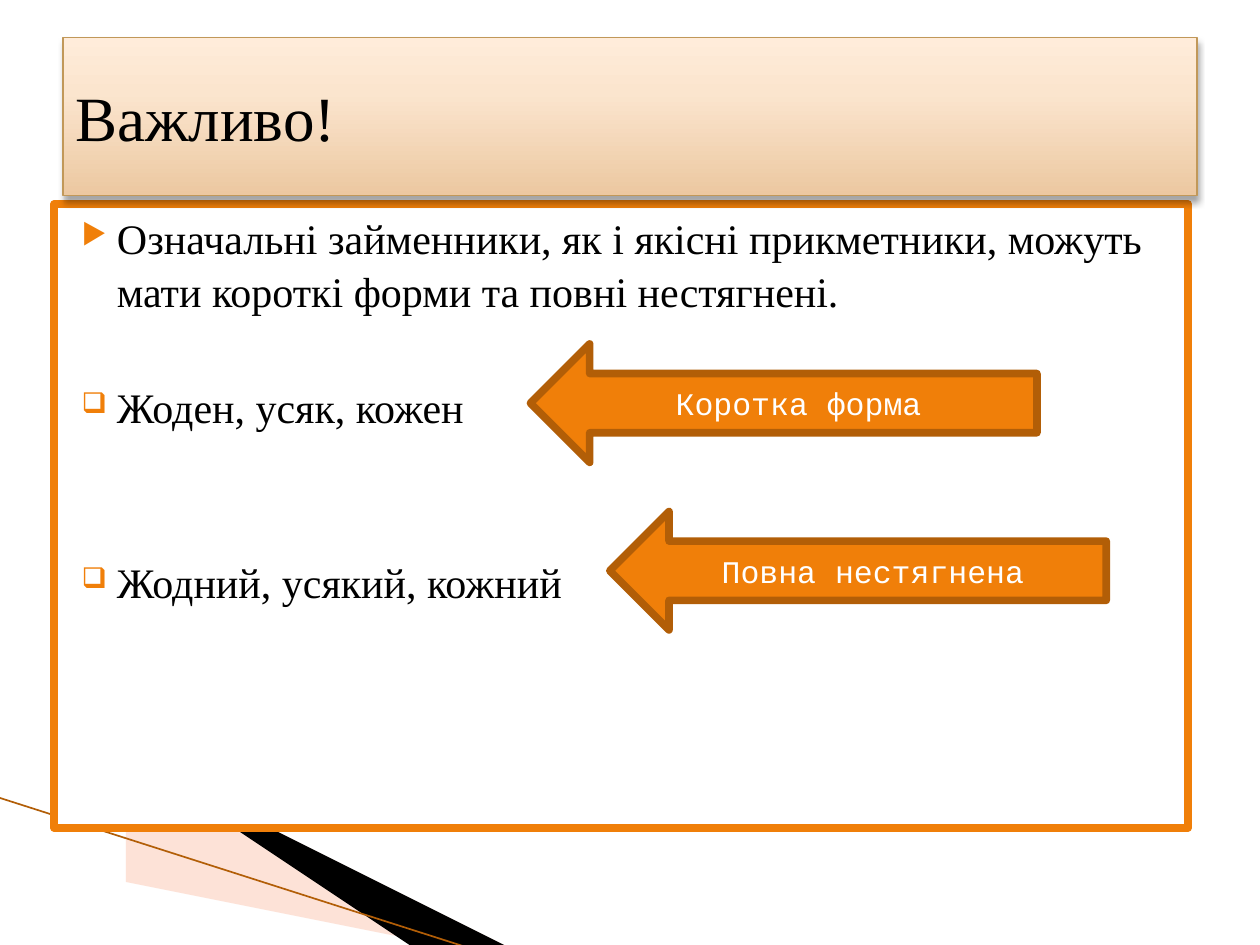
"""Builds a slide on the short and full forms of Ukrainian attributive pronouns."""
from copy import deepcopy

from pptx import Presentation
from pptx.dml.color import RGBColor
from pptx.enum.shapes import MSO_CONNECTOR, MSO_SHAPE
from pptx.enum.text import MSO_ANCHOR, PP_ALIGN
from pptx.oxml import parse_xml
from pptx.oxml.ns import nsdecls, qn
from pptx.util import Inches, Pt

RECTANGLE, LEFT_ARROW = MSO_SHAPE.RECTANGLE, MSO_SHAPE.LEFT_ARROW
STRAIGHT = MSO_CONNECTOR.STRAIGHT
TOP, MIDDLE = MSO_ANCHOR.TOP, MSO_ANCHOR.MIDDLE
LEFT, CENTER = PP_ALIGN.LEFT, PP_ALIGN.CENTER

COLORS = {
    "orange": "F07F09", "brown": "B25E07", "tan": "C19859", "peach": "FCB79B",
    "white": "FFFFFF", "black": "000000",
}
SERIF, MONO = "Times New Roman", "Courier New"

TITLE = "Важливо!"
TITLE_GRADIENT = [(0, "ECC8A1"), (0.65, "FBE5CE"), (1, "FFECDA")]
BULLETS = [
    ("▶", "Означальні займенники, як і якісні прикметники, можуть мати короткі форми та повні нестягнені.", 0),
    ("❑", "Жоден, усяк, кожен", 36),
    ("❑", "Жодний, усякий, кожний", 70),
]
ARROWS = [
    ("Коротка форма", (4.21, 2.73, 4.02, 0.94)),
    ("Повна нестягнена", (4.84, 4.06, 3.94, 0.94)),
]
WEDGES = [
    ("peach", 40, [(0.55, 6.51), (5.95, 7.51), (4.56, 7.51), (0.55, 6.5)]),
    ("black", 100, [(0.53, 6.49), (4.57, 7.51), (3.72, 7.52), (0.54, 6.5)]),
]


def color(name):
    return RGBColor.from_string(COLORS[name])


def add_wedge(page, fill, opacity, points):
    builder = page.shapes.build_freeform(*points[0], scale=Inches(1))
    builder.add_line_segments(points[1:], close=True)
    wedge = builder.convert_to_shape()
    wedge.shadow.inherit = False
    wedge.fill.solid()
    wedge.fill.fore_color.rgb = color(fill)
    wedge.line.fill.background()
    if opacity < 100:
        tone = wedge._element.spPr.find(".//" + qn("a:srgbClr"))
        tone.append(parse_xml(f'<a:alpha {nsdecls("a")} val="{opacity * 1000}"/>'))


def add_panel(page, preset, place, fill, line, width, anchor):
    panel = page.shapes.add_shape(preset, *map(Inches, place))
    panel.shadow.inherit = False
    panel.fill.solid()
    panel.fill.fore_color.rgb = color(fill)
    panel.line.color.rgb = color(line)
    panel.line.width = Pt(width)
    panel.line._ln.append(parse_xml(f'<a:round {nsdecls("a")}/>'))
    panel.text_frame.word_wrap = True
    panel.text_frame.vertical_anchor = anchor
    return panel


def write(para, text, *, size, font=SERIF, ink="black", align=LEFT):
    para.alignment = align
    span = para.add_run()
    span.text = text
    span.font.size = Pt(size)
    span.font.name = font
    span.font.color.rgb = color(ink)


def add_bullet(para, mark):
    props = para._p.get_or_add_pPr()
    props.set("marL", str(Inches(0.4)))
    props.set("indent", str(Inches(-0.28)))
    for xml in (f'<a:buClr {{}}><a:srgbClr val="{COLORS["orange"]}"/></a:buClr>',
                '<a:buSzPct {} val="68000"/>',
                f'<a:buChar {{}} char="{mark}"/>'):
        props.append(parse_xml(xml.format(nsdecls("a"))))


def decorate_title(panel):
    panel.fill.gradient()
    panel.fill.gradient_angle = 90
    props = panel._element.spPr
    stop_list = props.find(".//" + qn("a:gsLst"))
    stop_list.append(deepcopy(stop_list[-1]))
    for stop, (position, tone) in zip(panel.fill.gradient_stops, TITLE_GRADIENT):
        stop.position = position
        stop.color.rgb = RGBColor.from_string(tone)
    props.find(qn("a:effectLst")).append(parse_xml(
        f'<a:outerShdw {nsdecls("a")} blurRad="{Pt(4)}" dist="{Pt(3)}" dir="5400000" rotWithShape="0">'
        f'<a:srgbClr val="{COLORS["black"]}"><a:alpha val="35000"/></a:srgbClr></a:outerShdw>'))


def main():
    deck = Presentation()
    deck.slide_width, deck.slide_height = Inches(10), Inches(7.5)
    page = deck.slides.add_slide(deck.slide_layouts[6])

    for wedge in WEDGES:
        add_wedge(page, *wedge)
    edge = page.shapes.add_connector(STRAIGHT, *map(Inches, (-0.01, 6.33, 3.71, 7.52)))
    edge.line.color.rgb = color("brown")
    edge.line.width = Pt(0.95)
    edge._element.spPr.append(parse_xml(f'<a:effectLst {nsdecls("a")}/>'))

    body = add_panel(page, RECTANGLE, (0.43, 1.62, 9, 4.95), "white", "orange", 4.33, TOP)
    for index, (mark, text, gap) in enumerate(BULLETS):
        frame = body.text_frame
        para = frame.add_paragraph() if index else frame.paragraphs[0]
        para.line_spacing = 1.05
        para.space_before = Pt(gap)
        add_bullet(para, mark)
        write(para, text, size=24)

    title = add_panel(page, RECTANGLE, (0.5, 0.3, 9, 1.25), "white", "tan", 0.75, MIDDLE)
    decorate_title(title)
    write(title.text_frame.paragraphs[0], TITLE, size=36)

    for text, place in ARROWS:
        arrow = add_panel(page, LEFT_ARROW, place, "orange", "brown", 4.33, MIDDLE)
        write(arrow.text_frame.paragraphs[0], text, size=18, font=MONO, ink="white", align=CENTER)

    deck.save("out.pptx")


if __name__ == "__main__":
    main()
